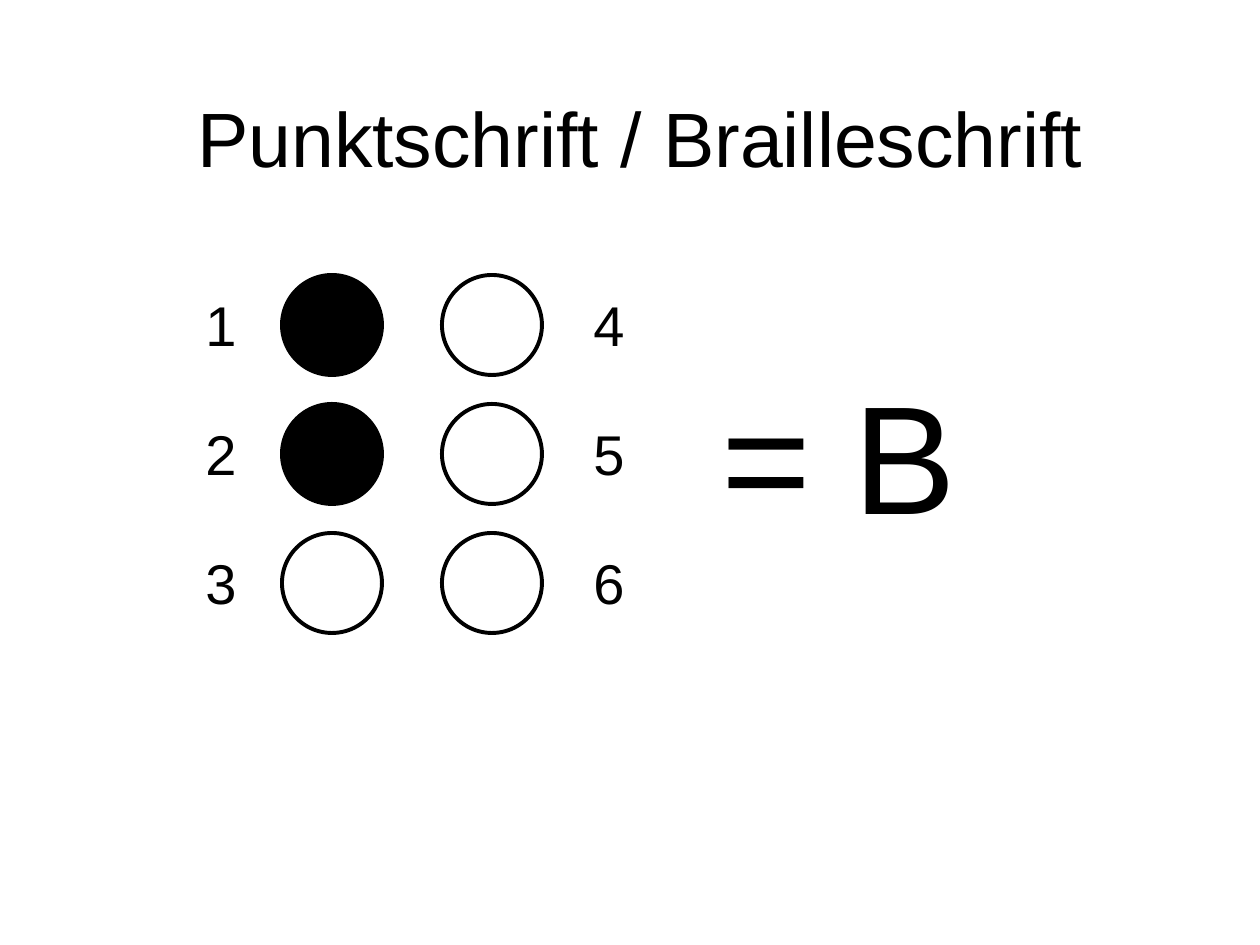
from pptx import Presentation
from pptx.dml.color import RGBColor
from pptx.enum.shapes import MSO_SHAPE
from pptx.enum.text import MSO_ANCHOR, MSO_AUTO_SIZE, PP_ALIGN
from pptx.util import Emu, Pt

OVAL = MSO_SHAPE.OVAL
MIDDLE = MSO_ANCHOR.MIDDLE
CENTER, LEFT = PP_ALIGN.CENTER, PP_ALIGN.LEFT
FIT_SHAPE, NO_FIT = MSO_AUTO_SIZE.SHAPE_TO_FIT_TEXT, MSO_AUTO_SIZE.NONE
BLACK = RGBColor.from_string("000000")


def px(*lengths):
    """Turn pixels (126 to the inch) into EMU."""
    return [Emu(round(n * 914400 / 126)) for n in lengths]


def write(sp, text, size, align=LEFT):
    tf = sp.text_frame
    tf.text = text
    p = tf.paragraphs[0]
    p.alignment = align
    p.font.name = "Arial"
    p.font.size = Pt(size)
    p.font.color.rgb = BLACK
    return tf


prs = Presentation()
prs.slide_width, prs.slide_height = px(1260, 945)
s = prs.slides.add_slide(prs.slide_layouts[5])

title = s.shapes.title
title.left, title.top, title.width, title.height = px(105, 35, 1071, 203)
tf = write(title, "Punktschrift / Brailleschrift", 44, CENTER)
tf.vertical_anchor = MIDDLE
tf.auto_size = NO_FIT

# Braille cell: dots 1-3 run down the left column, 4-6 down the right
RAISED = {1, 2}
ROW_STEP = 129
labels = []
for col, (dot_x, label_x) in enumerate([(282, 193), (442, 581)]):
    for row in range(3):
        number = col * 3 + row + 1
        dot = s.shapes.add_shape(OVAL, *px(dot_x, 275 + row * ROW_STEP, 100, 100))
        dot.shadow.inherit = False
        dot.line.color.rgb = BLACK
        dot.line.width = Pt(2.25)
        if number in RAISED:
            dot.fill.solid()
            dot.fill.fore_color.rgb = BLACK
        else:
            dot.fill.background()
        labels.append((str(number), 32, (label_x, 284 + row * ROW_STEP, 57, 79)))

labels.append(("= B", 88, (709, 354, 261, 198)))
for text, size, box in labels:
    tf = write(s.shapes.add_textbox(*px(*box)), text, size)
    tf.word_wrap = False
    tf.auto_size = FIT_SHAPE

prs.save("out.pptx")
